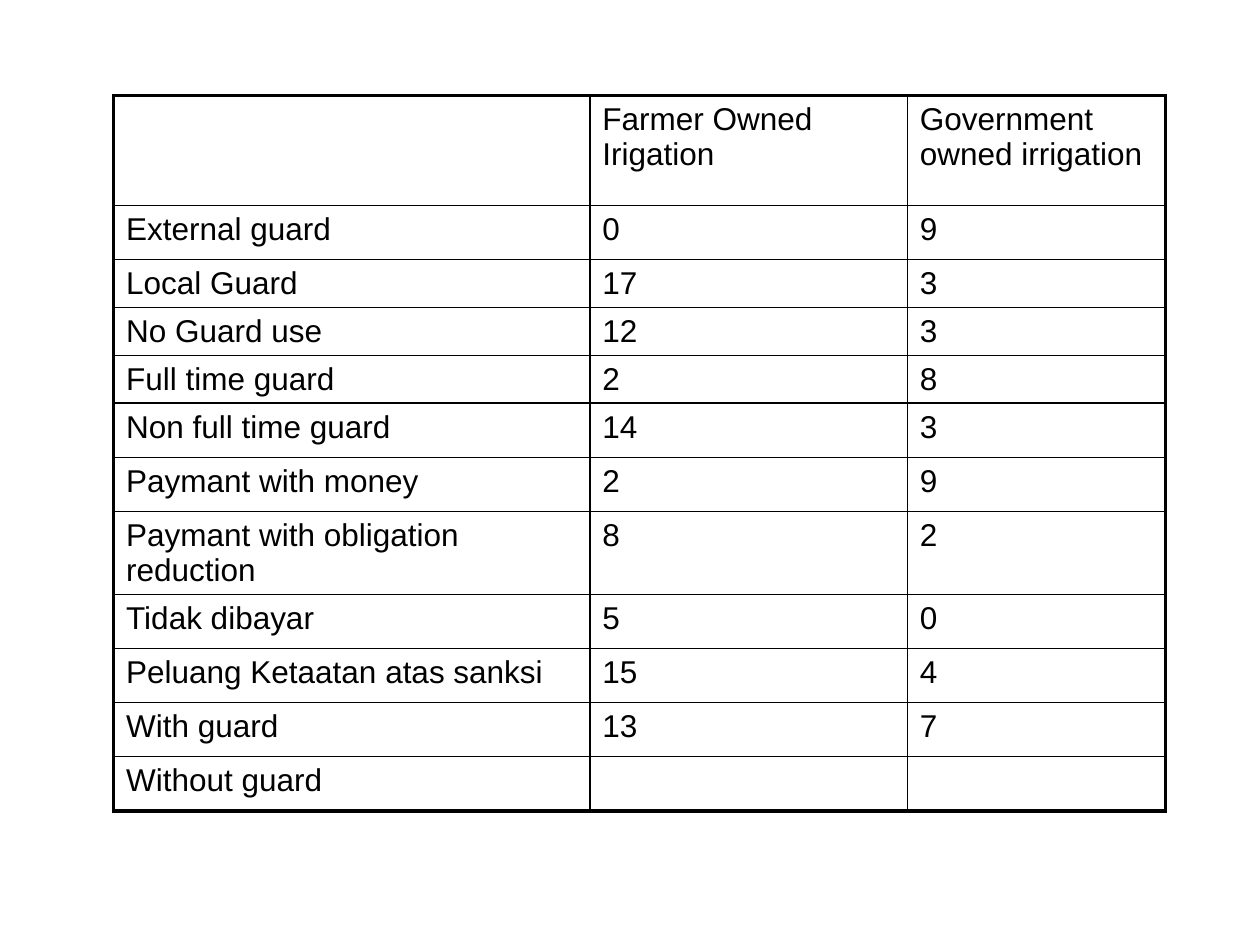
from lxml import etree
from pptx import Presentation
from pptx import util as u
from pptx.dml import color
from pptx.oxml import ns

COLORS = {"ink": "000000"}
FONT = "Arial"
THIN, THICK = 1, 2.25
COLUMN_WIDTHS = [9.6, 6.4, 5.21]
ROW_HEIGHTS = [2.21, 1.09, 0.81, 0.79, 0.91] + [1.09] * 7
ROWS = [
    ("", "Farmer Owned Irigation", "Government owned irrigation"),
    ("External guard", "0", "9"),
    ("Local Guard", "17", "3"),
    ("No Guard use", "12", "3"),
    ("Full time guard", "2", "8"),
    ("Non full time guard", "14", "3"),
    ("Paymant with money", "2", "9"),
    ("Paymant with obligation reduction", "8", "2"),
    ("Tidak dibayar", "5", "0"),
    ("Peluang Ketaatan atas sanksi", "15", "4"),
    ("With guard", "13", "7"),
    ("Without guard", "", ""),
]


def set_borders(cell, widths):
    properties = cell._tc.get_or_add_tcPr()
    for side, width in widths.items():
        line = etree.SubElement(properties, ns.qn(f"a:ln{side}"), w=str(u.Pt(width)))
        fill = etree.SubElement(line, ns.qn("a:solidFill"))
        etree.SubElement(fill, ns.qn("a:srgbClr"), val=COLORS["ink"])


def fill_cell(cell, content):
    cell.text_frame.text = content
    font = cell.text_frame.paragraphs[0].font
    runs = cell.text_frame.paragraphs[0].runs
    for font in [font] + [run.font for run in runs]:
        font.name = FONT
        font.size = u.Pt(18)
        font.color.rgb = color.RGBColor.from_string(COLORS["ink"])


def add_guard_table(slide, left, top, width, height):
    last_row, last_column = len(ROWS) - 1, len(COLUMN_WIDTHS) - 1
    shape = slide.shapes.add_table(
        len(ROWS), len(COLUMN_WIDTHS), u.Cm(left), u.Cm(top), u.Cm(width), u.Cm(height)
    )
    table = shape.table
    table.first_row = False
    table.horz_banding = False
    for column, column_width in zip(table.columns, COLUMN_WIDTHS):
        column.width = u.Cm(column_width)
    for row, row_height in zip(table.rows, ROW_HEIGHTS):
        row.height = u.Cm(row_height)
    shape.height = u.Cm(height)

    for row_index, contents in enumerate(ROWS):
        for column_index, content in enumerate(contents):
            cell = table.cell(row_index, column_index)
            fill_cell(cell, content)
            outer = {
                "L": column_index == 0,
                "R": column_index == last_column,
                "T": row_index == 0,
                "B": row_index == last_row,
            }
            set_borders(cell, {side: THICK if edge else THIN for side, edge in outer.items()})
            cell.fill.background()


def main():
    presentation = Presentation()
    presentation.slide_width = u.Cm(25.4)
    presentation.slide_height = u.Cm(19.05)
    slide = presentation.slides.add_slide(presentation.slide_layouts[6])
    add_guard_table(slide, 2.29, 1.93, 21.21, 14.71)
    presentation.save("out.pptx")


if __name__ == "__main__":
    main()
